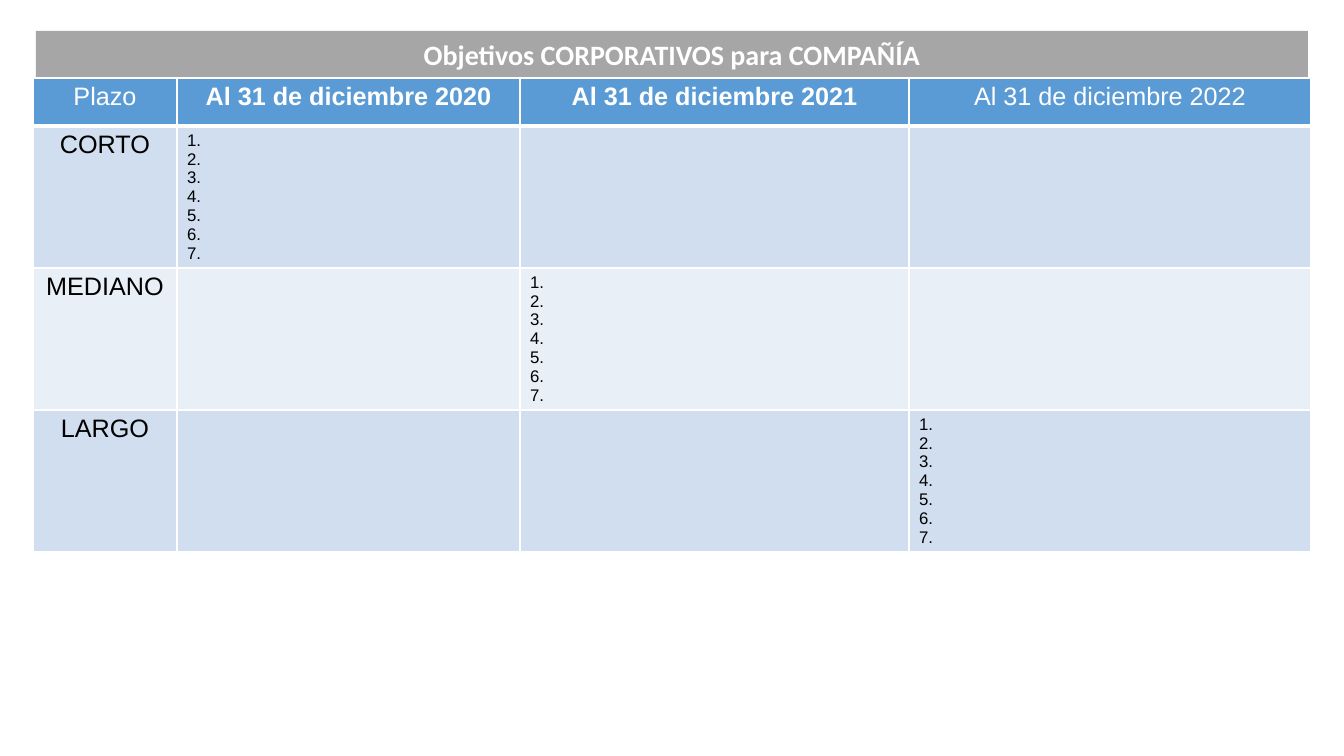
from dataclasses import dataclass

from lxml import etree
from pptx import Presentation
from pptx.dml.color import RGBColor
from pptx.enum import text
from pptx.oxml import ns
from pptx import util as u

SLIDE_W, SLIDE_H = 1344, 756
EMU_PER_PX = 12192000 / SLIDE_W


@dataclass(frozen=True)
class Theme:
    banner: str = "A6A6A6"
    header: str = "5B9BD5"
    bands: tuple = ("D0DEEF", "E9EFF7")
    light: str = "FFFFFF"
    dark: str = "000000"
    banner_size: int = 20
    label_size: int = 18
    list_size: int = 12
    banner_font: str = "Calibri"
    table_font: str = "Arial"
    rule: int = 1
    header_rule: int = 3


THEME = Theme()
HEADINGS = [
    ("Plazo", False),
    ("Al 31 de diciembre 2020", True),
    ("Al 31 de diciembre 2021", True),
    ("Al 31 de diciembre 2022", False),
]
TERMS = ["CORTO", "MEDIANO", "LARGO"]
GOALS = [f"{number}." for number in range(1, 8)]
COLUMN_WIDTHS = [144, 343, 389, 402]
HEADER_HEIGHT, TERM_HEIGHT = 48, 142


def px(length):
    return u.Emu(round(length * EMU_PER_PX))


def write(frame, lines, *, size, color, font=THEME.table_font, bold=False,
          align=text.PP_ALIGN.CENTER):
    for index, line in enumerate(lines):
        paragraph = frame.add_paragraph() if index else frame.paragraphs[0]
        paragraph.alignment = align
        run = paragraph.add_run()
        run.text = line
        run.font.name = font
        run.font.size = u.Pt(size)
        run.font.bold = bold
        run.font.color.rgb = RGBColor.from_string(color)


def paint(filled, color):
    filled.fill.solid()
    filled.fill.fore_color.rgb = RGBColor.from_string(color)


def style_cell(cell, color, top, bottom):
    """Fill the cell and rule its edges; top and bottom are widths in points."""
    paint(cell, color)
    properties = cell._tc.get_or_add_tcPr()
    edges = [("lnL", THEME.rule), ("lnR", THEME.rule), ("lnT", top), ("lnB", bottom)]
    for position, (edge, width) in enumerate(edges):
        line = etree.Element(ns.qn(f"a:{edge}"), w=str(u.Pt(width)))
        solid = etree.SubElement(line, ns.qn("a:solidFill"))
        etree.SubElement(solid, ns.qn("a:srgbClr"), val=THEME.light)
        properties.insert(position, line)


def add_banner(slide, left, top, width, height):
    banner = slide.shapes.title
    banner.left, banner.top = px(left), px(top)
    banner.width, banner.height = px(width), px(height)
    paint(banner, THEME.banner)
    frame = banner.text_frame
    frame.word_wrap = True
    frame.auto_size = text.MSO_AUTO_SIZE.NONE
    frame.vertical_anchor = text.MSO_ANCHOR.MIDDLE
    write(frame, ["Objetivos CORPORATIVOS para COMPAÑÍA"], size=THEME.banner_size,
          color=THEME.light, font=THEME.banner_font, bold=True)


def add_goals_table(slide, left, top):
    height = HEADER_HEIGHT + TERM_HEIGHT * len(TERMS)
    table = slide.shapes.add_table(
        len(TERMS) + 1, len(HEADINGS), px(left), px(top),
        px(sum(COLUMN_WIDTHS)), px(height)).table
    table.horz_banding = False
    for column, width in zip(table.columns, COLUMN_WIDTHS):
        column.width = px(width)

    table.rows[0].height = px(HEADER_HEIGHT)
    for cell, (heading, bold) in zip(table.rows[0].cells, HEADINGS):
        style_cell(cell, THEME.header, THEME.rule, THEME.header_rule)
        write(cell.text_frame, [heading], size=THEME.label_size,
              color=THEME.light, bold=bold)

    for row, term in enumerate(TERMS, start=1):
        table.rows[row].height = px(TERM_HEIGHT)
        band = THEME.bands[(row - 1) % len(THEME.bands)]
        above = THEME.header_rule if row == 1 else THEME.rule
        for cell in table.rows[row].cells:
            style_cell(cell, band, above, THEME.rule)
        write(table.cell(row, 0).text_frame, [term], size=THEME.label_size,
              color=THEME.dark)
        # Each term has its goals under its own closing date: the diagonal.
        write(table.cell(row, row).text_frame, GOALS, size=THEME.list_size,
              color=THEME.dark, align=text.PP_ALIGN.JUSTIFY)


def main():
    deck = Presentation()
    deck.slide_width, deck.slide_height = px(SLIDE_W), px(SLIDE_H)
    slide = deck.slides.add_slide(deck.slide_layouts.get_by_name("Title Only"))
    add_goals_table(slide, 33, 78)
    add_banner(slide, 36, 31, 1272, 47)
    deck.save("out.pptx")


if __name__ == "__main__":
    main()
